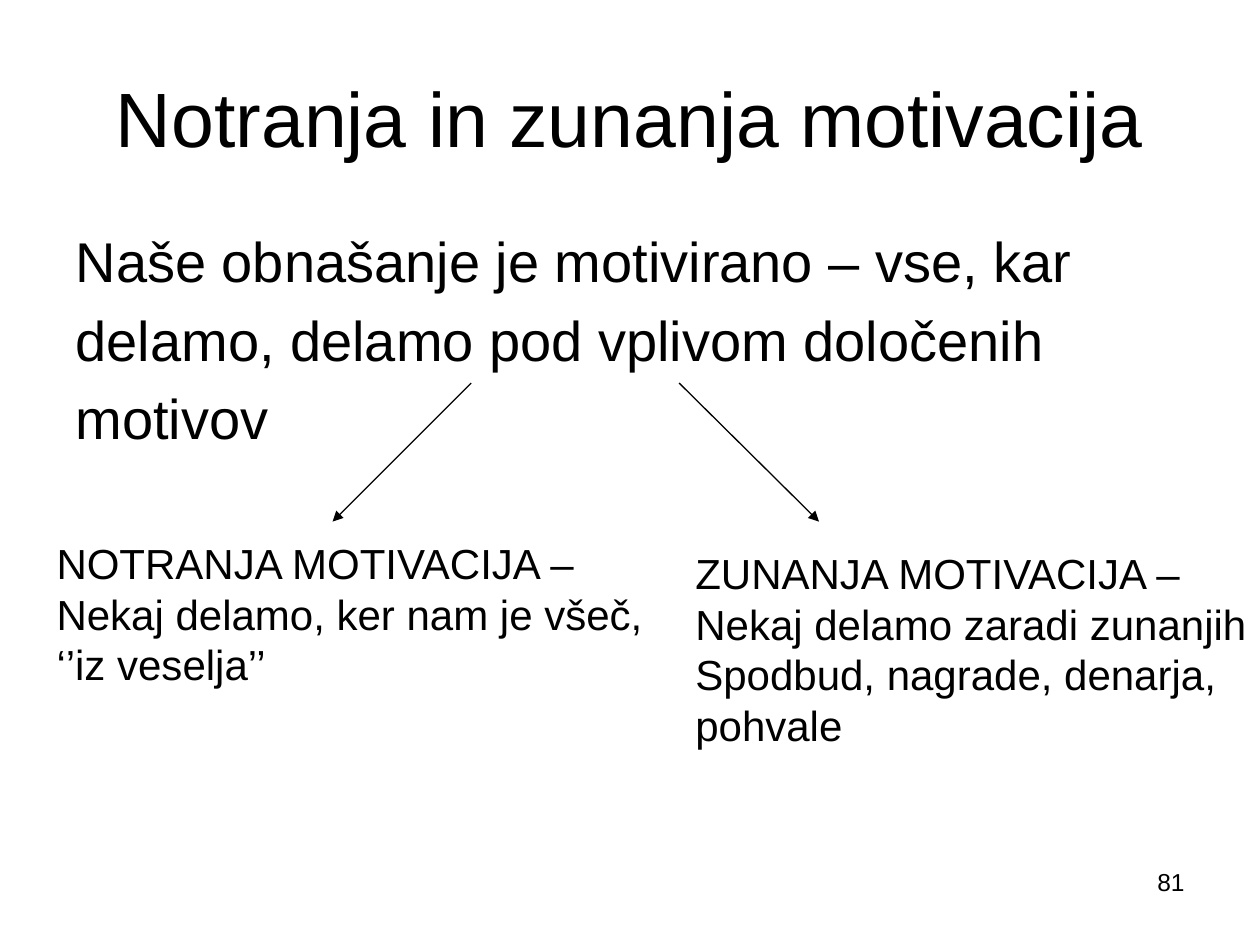
from pptx import Presentation
from pptx.dml.color import RGBColor
from pptx.enum.shapes import MSO_CONNECTOR
from pptx.enum.text import MSO_ANCHOR, MSO_AUTO_SIZE, PP_ALIGN
from pptx.oxml.ns import qn
from pptx.util import Inches, Pt
from lxml.etree import SubElement

COLORS = {"ink": "000000", "paper": "FFFFFF"}
INK = RGBColor.from_string(COLORS["ink"])
FONT = "Arial"


def place(shape, box):
    shape.left, shape.top, shape.width, shape.height = map(Inches, box)


def write(frame, lines, size, align=PP_ALIGN.LEFT):
    frame.text = "\n".join(lines)
    for para in frame.paragraphs:
        para.alignment = align
        font = para.font
        font.name, font.size, font.color.rgb = FONT, Pt(size), INK


def add_title(slide, box, text):
    title = slide.shapes.title
    place(title, box)
    write(title.text_frame, [text], 44, PP_ALIGN.CENTER)
    title.text_frame.vertical_anchor = MSO_ANCHOR.MIDDLE


def add_body(slide, box, lines):
    body = slide.placeholders[1]
    place(body, box)
    frame = body.text_frame
    write(frame, lines, 32)
    frame.auto_size = MSO_AUTO_SIZE.NONE
    # Hanging indent without bullets
    for para in frame.paragraphs:
        props = para._p.get_or_add_pPr()
        props.set("marL", str(Inches(0.38)))
        props.set("indent", str(-Inches(0.38)))
        SubElement(props, qn("a:buNone"))


def add_note(slide, box, lines, size=24, align=PP_ALIGN.LEFT, wrap=False):
    note = slide.shapes.add_textbox(*map(Inches, box))
    frame = note.text_frame
    frame.word_wrap = wrap
    if not wrap:
        frame.auto_size = MSO_AUTO_SIZE.SHAPE_TO_FIT_TEXT
    write(frame, lines, size, align)


def add_arrow(slide, start, end):
    arrow = slide.shapes.add_connector(
        MSO_CONNECTOR.STRAIGHT, *map(Inches, (*start, *end)))
    arrow.line.color.rgb = INK
    arrow.line.width = Pt(0.75)
    SubElement(arrow.line._get_or_add_ln(), qn("a:tailEnd"), type="triangle")
    SubElement(arrow._element.spPr, qn("a:effectLst"))


def main():
    deck = Presentation()
    deck.slide_width, deck.slide_height = Inches(10), Inches(7.5)
    slide = deck.slides.add_slide(deck.slide_layouts[1])
    fill = slide.background.fill
    fill.solid()
    fill.fore_color.rgb = RGBColor.from_string(COLORS["paper"])

    # Title and statement
    add_title(slide, (0.5, 0.3, 9, 1.25), "Notranja in zunanja motivacija")
    add_body(slide, (0.5, 1.75, 9, 4.95), [
        "Naše obnašanje je motivirano – vse, kar",
        "delamo, delamo pod vplivom določenih",
        "motivov"])

    # Two kinds of motivation
    add_note(slide, (0.35, 4.22, 4.85, 1.3), [
        "NOTRANJA MOTIVACIJA –",
        "Nekaj delamo, ker nam je všeč,",
        "‘’iz veselja’’"])
    add_note(slide, (5.42, 4.3, 4.58, 1.7), [
        "ZUNANJA MOTIVACIJA –",
        "Nekaj delamo zaradi zunanjih",
        "Spodbud, nagrade, denarja,",
        "pohvale"])

    # Arrows from the statement to each kind
    for start, end in ((3.74, 2.64), (5.39, 6.5)):
        add_arrow(slide, (start, 3.04), (end, 4.14))

    # Slide number
    add_note(slide, (7.17, 6.83, 2.33, 0.52), ["81"], 14, PP_ALIGN.RIGHT, True)
    deck.save("out.pptx")


if __name__ == "__main__":
    main()
